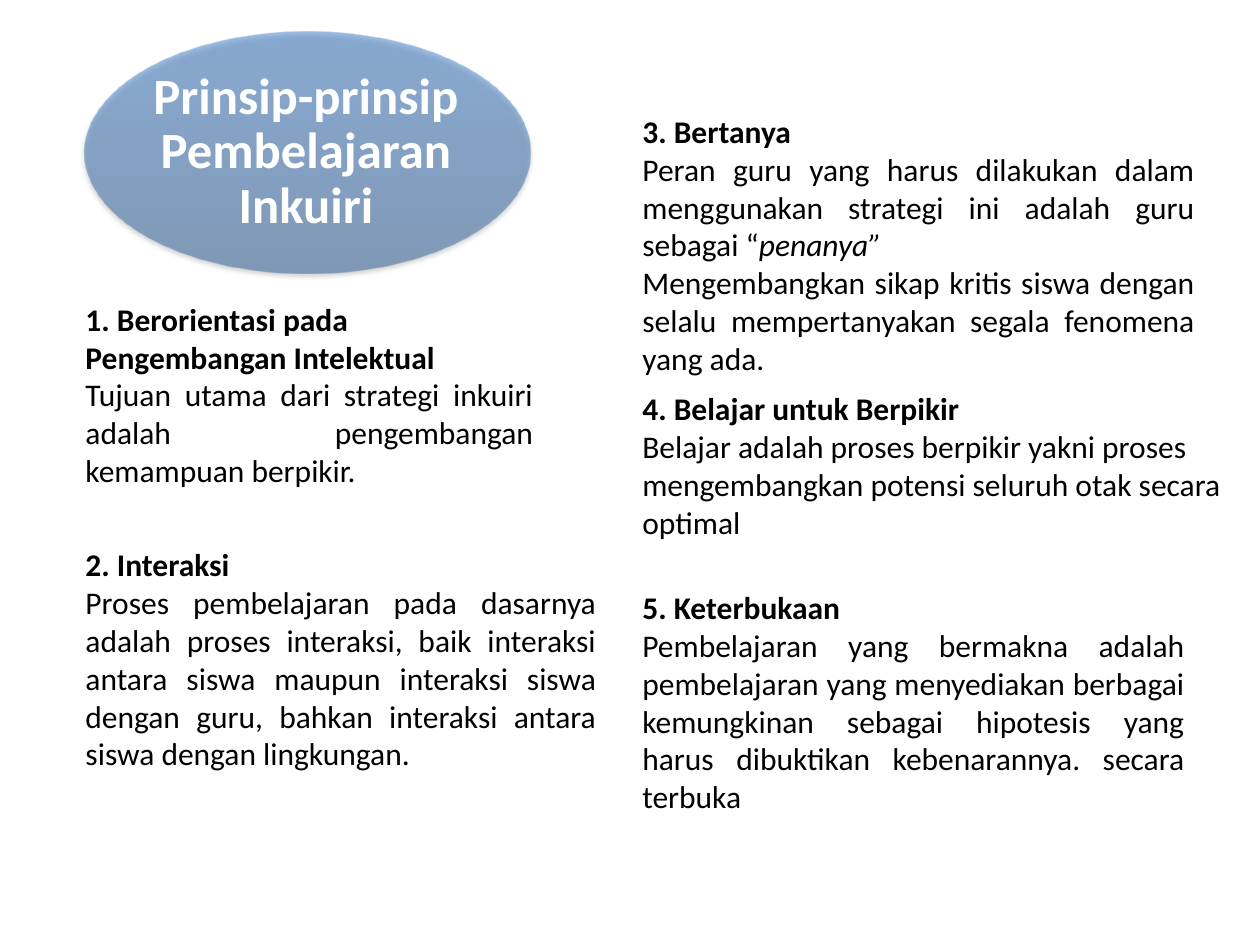
from lxml import etree
from pptx import Presentation
from pptx.dml.color import RGBColor
from pptx.enum.shapes import MSO_SHAPE
from pptx.enum.text import MSO_ANCHOR, MSO_AUTO_SIZE, PP_ALIGN
from pptx.oxml import parse_xml
from pptx.oxml.ns import nsdecls
from pptx.util import Inches, Pt

BLACK = RGBColor(0, 0, 0)
WHITE = RGBColor(255, 255, 255)
STOPS = [
    (0, RGBColor(0x2F, 0x5F, 0x99)),
    (80, RGBColor(0x3D, 0x7C, 0xC7)),
    (100, RGBColor(0x3A, 0x7C, 0xCB)),
]
LEFT, JUST, MID = PP_ALIGN.LEFT, PP_ALIGN.JUSTIFY, PP_ALIGN.CENTER
OVAL = MSO_SHAPE.OVAL
CENTER = MSO_ANCHOR.MIDDLE
GROW, FIXED = MSO_AUTO_SIZE.SHAPE_TO_FIT_TEXT, MSO_AUTO_SIZE.NONE

BODY = {"name": "Calibri", "size": Pt(18), "bold": False}
HEAD = {**BODY, "bold": True}
SLANT = {**BODY, "italic": True}
TITLE = {**HEAD, "size": Pt(29)}

POINTS = [
    ((0.58, 2.33, 3.75, 1.92), [
        (LEFT, [("1. Berorientasi pada Pengembangan Intelektual", HEAD)]),
        (JUST, [("Tujuan utama dari strategi inkuiri adalah pengembangan "
                 "kemampuan berpikir.", BODY)]),
    ]),
    ((0.58, 4.28, 4.25, 2.22), [
        (JUST, [("2. Interaksi", HEAD)]),
        (JUST, [("Proses pembelajaran pada dasarnya adalah proses interaksi, "
                 "baik interaksi antara siswa maupun interaksi siswa dengan "
                 "guru, bahkan interaksi antara siswa dengan lingkungan.", BODY)]),
    ]),
    ((5, 0.84, 4.58, 2.22), [
        (JUST, [("3. Bertanya", HEAD)]),
        (JUST, [("Peran guru yang harus dilakukan dalam menggunakan strategi "
                 "ini adalah guru sebagai “", BODY), ("penanya”", SLANT)]),
        (JUST, [("Mengembangkan sikap kritis siswa dengan selalu "
                 "mempertanyakan segala fenomena yang ada.", BODY)]),
    ]),
    ((5, 3.04, 5, 1.31), [
        (JUST, [("4. Belajar untuk Berpikir", HEAD)]),
        (LEFT, [("Belajar adalah proses berpikir yakni proses mengembangkan "
                 "potensi seluruh otak secara optimal", BODY)]),
    ]),
    ((5, 4.62, 4.5, 1.94), [
        (JUST, [("5. Keterbukaan", HEAD)]),
        (JUST, [("Pembelajaran yang bermakna adalah pembelajaran yang "
                 "menyediakan berbagai kemungkinan sebagai hipotesis yang "
                 "harus dibuktikan kebenarannya. secara terbuka", BODY)]),
    ]),
]


def add_run(para, text, style, color):
    run = para.add_run()
    run.text = text
    for key, value in style.items():
        setattr(run.font, key, value)
    run.font.color.rgb = color


def add_point(slide, place, paras):
    box = slide.shapes.add_textbox(*map(Inches, place))
    frame = box.text_frame
    frame.word_wrap = True
    frame.auto_size = GROW
    for i, (align, runs) in enumerate(paras):
        para = frame.add_paragraph() if i else frame.paragraphs[0]
        para.alignment = align
        for text, style in runs:
            add_run(para, text, style, BLACK)


def add_oval(slide, place):
    oval = slide.shapes.add_shape(OVAL, *map(Inches, place))
    oval.line.fill.background()
    oval.fill.gradient()
    props = oval.fill._xPr
    old = props.find("{*}gradFill")
    stops = "".join(
        f'<a:gs pos="{pos * 1000}"><a:srgbClr val="{color}">'
        '<a:alpha val="50000"/></a:srgbClr></a:gs>'
        for pos, color in STOPS
    )
    grad = parse_xml(
        f'<a:gradFill {nsdecls("a")} rotWithShape="1"><a:gsLst>{stops}</a:gsLst>'
        '<a:lin ang="16200000" scaled="0"/></a:gradFill>'
    )
    props.replace(old, grad)
    oval.shadow.inherit = False
    shade = parse_xml(
        f'<a:outerShdw {nsdecls("a")} blurRad="{Pt(3.1)}" dist="{Pt(1.8)}" '
        'dir="5400000" rotWithShape="0"><a:srgbClr val="000000">'
        '<a:alpha val="35000"/></a:srgbClr></a:outerShdw>'
    )
    props.find("{*}effectLst").append(shade)
    return oval


def set_title(slide, text, place, oval):
    title = slide.shapes.title
    sides = ("left", "top", "width", "height")
    for side, value in zip(sides, place):
        setattr(title, side, Inches(value))
    frame = title.text_frame
    form = {"word_wrap": True, "auto_size": FIXED, "vertical_anchor": CENTER}
    form.update({f"margin_{s}": 0 for s in ("left", "top", "right", "bottom")})
    for key, value in form.items():
        setattr(frame, key, value)
    para = frame.paragraphs[0]
    para.alignment = MID
    para.line_spacing = 0.9
    add_run(para, text, TITLE, WHITE)
    oval._element.addnext(title._element)


def main():
    deck = Presentation()
    deck.slide_width, deck.slide_height = Inches(10), Inches(7.5)
    slide = deck.slides.add_slide(deck.slide_layouts[5])
    oval = add_oval(slide, (0.67, 0.25, 3.54, 1.92))
    set_title(slide, "Prinsip-prinsip Pembelajaran Inkuiri",
              (1.18, 0.53, 2.5, 1.36), oval)
    for place, paras in POINTS:
        add_point(slide, place, paras)
    deck.save("out.pptx")


if __name__ == "__main__":
    main()
